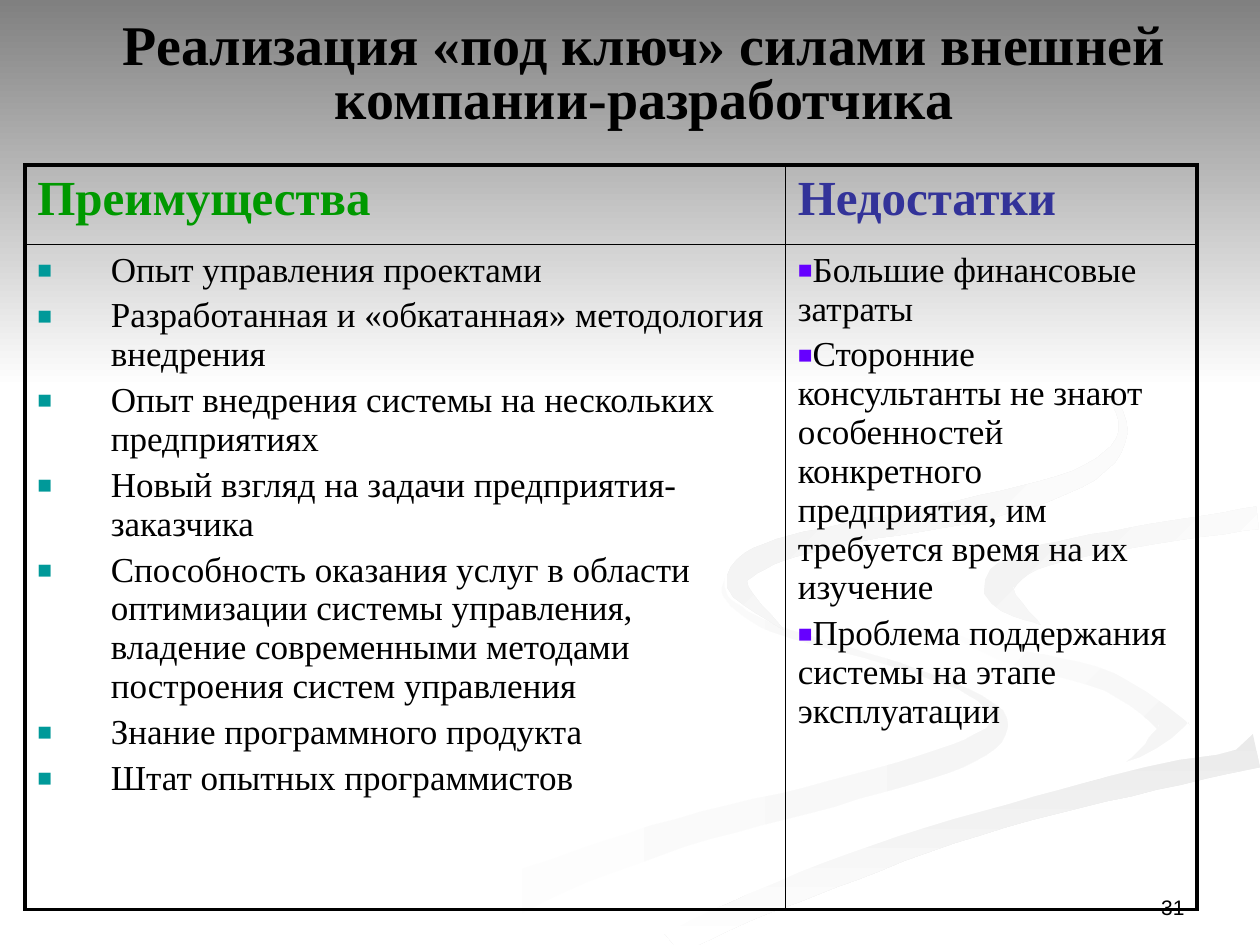
from math import hypot

from lxml import etree
from pptx import Presentation
from pptx.dml.color import RGBColor
from pptx.enum import shapes, text
from pptx.oxml import ns
from pptx.util import Cm, Pt

BLACK = RGBColor(0, 0, 0)
WHITE = RGBColor(0xFF, 0xFF, 0xFF)
GREY = RGBColor(0x80, 0x80, 0x80)
MIST = RGBColor(0xF5, 0xF5, 0xF5)
PEARL = RGBColor(0xF1, 0xF1, 0xF1)
CLOUD = RGBColor(0xED, 0xED, 0xED)
SMOKE = RGBColor(0xEA, 0xEA, 0xEA)
GREEN = RGBColor(0x00, 0x99, 0x00)
BLUE = RGBColor(0x33, 0x33, 0x99)
TEAL = RGBColor(0x00, 0x99, 0x99)
VIOLET = RGBColor(0x66, 0x00, 0xFF)
SERIF = "Times New Roman"
GRID = Cm(0.0254)
STEPS = 6

# Each knot is the x and y of a ribbon's middle and half its breadth, in GRID units.
TAIL = [(575, 459, 0), (578, 476, 2), (615, 499, 3), (700, 524, 2), (770, 550, 2),
        (793, 575, 7), (760, 600, 10), (660, 630, 10), (540, 661, 12),
        (425, 702, 15), (330, 749, 26)]
CURL = [(724, 464, 0), (738, 488, 3), (795, 517, 7), (880, 541, 8),
        (930, 572, 13), (915, 592, 6), (894, 605, 0)]
SHADE = [(998, 595, 14), (895, 622, 10), (775, 654, 9), (660, 693, 12),
         (580, 727, 10), (530, 749, 12)]
ROAD = [(999, 394, 8), (890, 413, 7), (780, 436, 12), (753, 463, 28),
        (785, 495, 17), (880, 522, 9), (971, 565, 28), (920, 600, 6),
        (820, 628, 4), (690, 665, 6), (580, 707, 8), (490, 749, 10)]
EDGE = [(998, 411, 9), (897, 427, 8), (820, 444, 9), (793, 468, 12), (826, 496, 0)]
LOOP = [(762, 233, 0), (850, 282, 2), (891, 335, 3), (865, 375, 7), (780, 403, 10),
        (680, 422, 8), (610, 440, 9), (585, 464, 8), (622, 500, 0)]
WAVES = [(TAIL, WHITE, MIST, 0), (CURL, WHITE, MIST, 45), (SHADE, SMOKE, WHITE, 90),
         (ROAD, WHITE, WHITE, 0), (EDGE, PEARL, WHITE, 45), (LOOP, CLOUD, WHITE, 45)]

PROS = ["Опыт управления проектами",
        "Разработанная и «обкатанная» методология внедрения",
        "Опыт внедрения системы на нескольких предприятиях",
        "Новый взгляд на задачи предприятия-заказчика",
        "Способность оказания услуг в области оптимизации системы управления, "
        "владение современными методами построения систем управления",
        "Знание программного продукта",
        "Штат опытных программистов"]
CONS = ["Большие финансовые затраты",
        "Сторонние консультанты не знают особенностей конкретного предприятия, "
        "им требуется время на их изучение",
        "Проблема поддержания системы на этапе эксплуатации"]


def add_run(para, words, size, face=SERIF, hue=BLACK, bold=False):
    run = para.add_run()
    run.text = words
    font = run.font
    font.size, font.name, font.bold = Pt(size), face, bold
    font.color.rgb = hue


def add_sub(node, tag, **attrs):
    return etree.SubElement(node, ns.qn(tag), **attrs)


def blend(a, b, c, d, t):
    return b + t * ((c - a) + t * ((2 * a - 5 * b + 4 * c - d)
                                   + t * (3 * b - a - 3 * c + d))) / 2


def smooth(knots):
    ends = [knots[0], *knots, knots[-1]]
    line = [tuple(blend(*axis, step / STEPS) for axis in zip(*quad))
            for quad in zip(ends, ends[1:], ends[2:], ends[3:])
            for step in range(STEPS)]
    return line + [knots[-1]]


def outline(knots, wide, high):
    line = smooth(knots)
    sides = ([], [])
    for num, (x, y, half) in enumerate(line):
        back, ahead = line[max(num - 1, 0)], line[min(num + 1, len(line) - 1)]
        run, rise = ahead[0] - back[0], ahead[1] - back[1]
        reach = max(half, 0) / hypot(run, rise)
        for side, sign in zip(sides, (1, -1)):
            side.append((min(x - sign * rise * reach, wide),
                         min(y + sign * run * reach, high)))
    return sides[0] + sides[1][::-1]


def paint(shape, start, end, turn):
    shape.shadow.inherit = False
    shape.line.fill.background()
    if start == end:
        shape.fill.solid()
        shape.fill.fore_color.rgb = start
        return
    shape.fill.gradient()
    shape.fill.gradient_angle = -turn % 360
    for stop, hue in zip(shape.fill.gradient_stops, (start, end)):
        stop.color.rgb = hue


def draw_back(slide, left, top, width, height):
    for knots, start, end, turn in WAVES:
        dots = outline(knots, width / GRID, height / GRID)
        pen = slide.shapes.build_freeform(*dots[0], scale=GRID)
        pen.add_line_segments(dots[1:], close=True)
        paint(pen.convert_to_shape(left, top), start, end, turn)
    band = slide.shapes.add_shape(shapes.MSO_SHAPE.RECTANGLE, left, top, width, Cm(7.82))
    paint(band, GREY, WHITE, 90)


def draw_label(slide, box, words, anchor, align, space=1.0, **style):
    frame = slide.shapes.add_textbox(*box).text_frame
    frame.word_wrap = True
    frame.vertical_anchor = anchor
    para = frame.paragraphs[0]
    para.alignment, para.line_spacing = align, space
    add_run(para, words, **style)


def set_edges(cell, row, col):
    thick = {"L": col == 0, "R": col == 1, "T": row == 0, "B": row == 1}
    props = cell._tc.get_or_add_tcPr()
    for side, outer in thick.items():
        line = add_sub(props, f"a:ln{side}", w=str(Pt(2.25 if outer else 1)))
        add_sub(add_sub(line, "a:solidFill"), "a:srgbClr", val=str(BLACK))
    cell.fill.background()


def fill_list(cell, items, hue, indent):
    frame = cell.text_frame
    for num, item in enumerate(items):
        para = frame.add_paragraph() if num else frame.paragraphs[0]
        para.space_before = Pt(4)
        props = para._p.get_or_add_pPr()
        props.set("marL", str(indent))
        props.set("indent", str(-indent))
        add_sub(add_sub(props, "a:buClr"), "a:srgbClr", val=str(hue))
        add_sub(props, "a:buSzPct", val="70000")
        add_sub(props, "a:buFont", typeface=SERIF)
        add_sub(props, "a:buChar", char="■")
        add_run(para, item, 20)


def draw_table(slide, left, top, width, height):
    table = slide.shapes.add_table(2, 2, left, top, width, height).table
    table.first_row = table.horz_banding = False
    wide, head = Cm(15.33), Cm(1.6)
    table.columns[0].width, table.columns[1].width = wide, width - wide
    table.rows[0].height, table.rows[1].height = head, height - head
    parts = [("Преимущества", GREEN, PROS, TEAL, Cm(1.48)),
             ("Недостатки", BLUE, CONS, VIOLET, Cm(0))]
    for col, (title, hue, items, mark, indent) in enumerate(parts):
        para = table.cell(0, col).text_frame.paragraphs[0]
        para.space_before = Pt(5.6)
        add_run(para, title, 28, hue=hue, bold=True)
        fill_list(table.cell(1, col), items, mark, indent)
        for row in range(2):
            set_edges(table.cell(row, col), row, col)


def main():
    deck = Presentation()
    deck.slide_width, deck.slide_height = Cm(25.4), Cm(19.05)
    slide = deck.slides.add_slide(deck.slide_layouts[6])
    draw_back(slide, Cm(0), Cm(0), deck.slide_width, deck.slide_height)
    draw_label(slide, (Cm(18.21), Cm(17.35), Cm(5.92), Cm(1.32)), "31",
               text.MSO_ANCHOR.BOTTOM, text.PP_ALIGN.RIGHT, size=12, face="Arial")
    draw_label(slide, (Cm(1.27), Cm(0.76), Cm(23.44), Cm(1.55)),
               "Реализация «под ключ» силами внешней компании-разработчика",
               text.MSO_ANCHOR.MIDDLE, text.PP_ALIGN.CENTER, 0.8, size=32, bold=True)
    draw_table(slide, Cm(0.5), Cm(3.33), Cm(23.63), Cm(15.01))
    deck.save("out.pptx")


if __name__ == "__main__":
    main()
